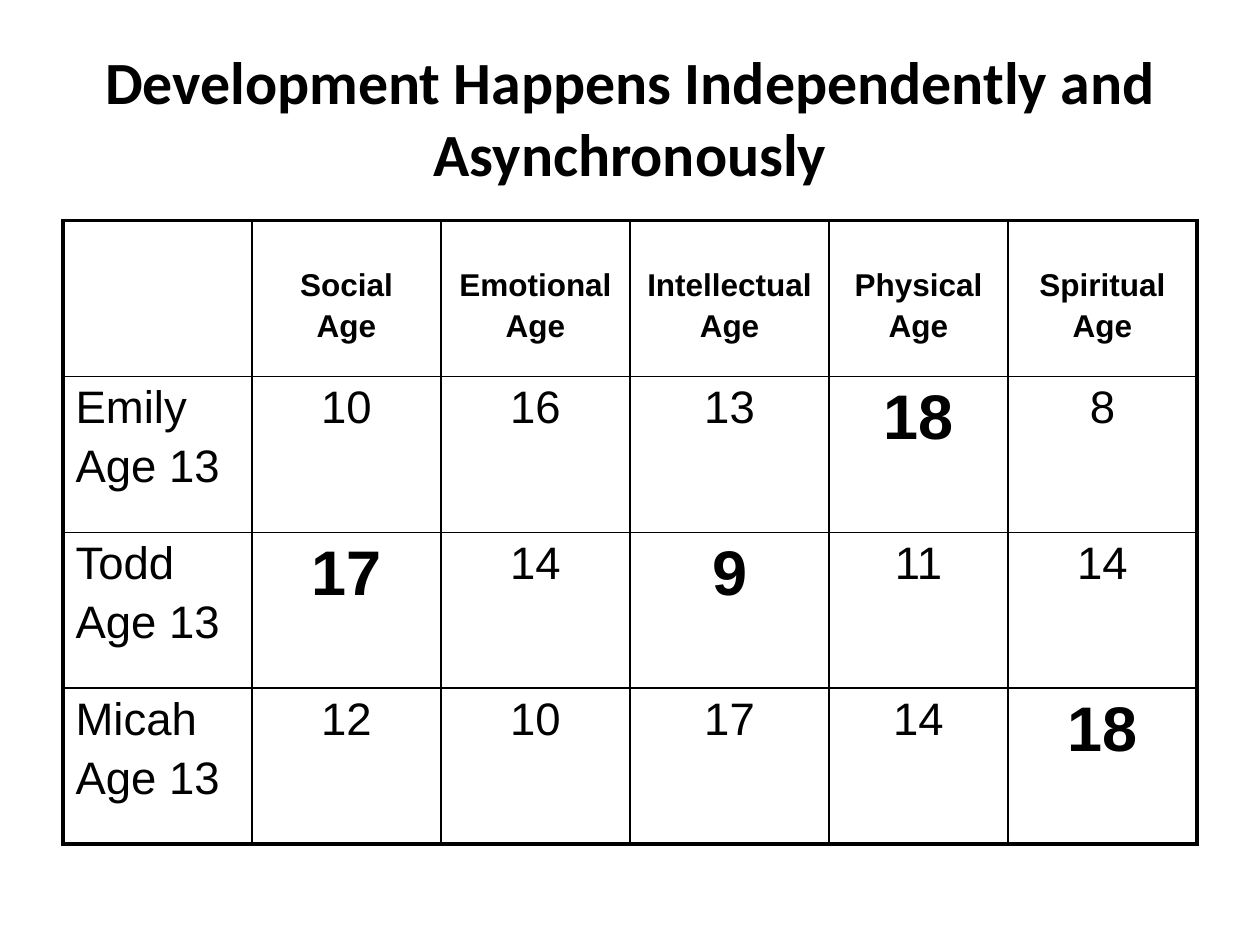
from lxml.etree import SubElement
from pptx import Presentation
from pptx.dml.color import RGBColor
from pptx.enum.text import MSO_ANCHOR, PP_ALIGN
from pptx.oxml.ns import qn
from pptx.util import Inches, Pt

COLORS = {"ink": "000000", "paper": "FFFFFF"}
SLIDE_W, SLIDE_H = Inches(10), Inches(7.5)
TITLE = "Development Happens Independently and Asynchronously"
HEADERS = ["Social", "Emotional", "Intellectual", "Physical", "Spiritual"]
AGES = {
    "Emily": [10, 16, 13, 18, 8],
    "Todd": [17, 14, 9, 11, 14],
    "Micah": [12, 10, 17, 14, 18],
}
STANDOUT = {("Emily", 3), ("Todd", 0), ("Todd", 2), ("Micah", 4)}
COL_SHARES = [1.5, 1.5, 1.5, 1.58, 1.42, 1.5]
THIN, THICK = 1, 2.25


def box(x, y, w, h):
    """Turn shares of the slide's size into lengths."""
    return int(x * SLIDE_W), int(y * SLIDE_H), int(w * SLIDE_W), int(h * SLIDE_H)


def write(tf, text, size=26, bold=False, font="Arial", align=PP_ALIGN.CENTER):
    """Write each line of text as a paragraph in one format."""
    for i, line in enumerate(text.split("\n")):
        p = tf.add_paragraph() if i else tf.paragraphs[0]
        p.alignment = align
        p.space_before = Pt(round(size * 0.18, 1) if i else 0)
        r = p.add_run()
        r.text = line
        r.font.name, r.font.size, r.font.bold = font, Pt(size), bold
        r.font.color.rgb = RGBColor.from_string(COLORS["ink"])


def set_borders(cell, widths):
    tcPr = cell._tc.get_or_add_tcPr()
    for i, (side, width) in enumerate(widths.items()):
        ln = tcPr.makeelement(qn(f"a:{side}"), {"w": str(Pt(width))})
        fill = SubElement(ln, qn("a:solidFill"))
        SubElement(fill, qn("a:srgbClr"), val=COLORS["ink"])
        tcPr.insert(i, ln)


def add_title(s, x, y, w, h):
    tf = s.shapes.add_textbox(x, y, w, h).text_frame
    tf.word_wrap = True
    tf.vertical_anchor = MSO_ANCHOR.MIDDLE
    write(tf, TITLE, size=34.2, bold=True, font="Calibri")


def fill_text(table):
    for c, name in enumerate(HEADERS, 1):
        cell = table.cell(0, c)
        cell.margin_top = Inches(0.38)
        write(cell.text_frame, f"{name}\nAge", size=18, bold=True)
    for r, (child, ages) in enumerate(AGES.items(), 1):
        write(table.cell(r, 0).text_frame, f"{child}\nAge 13", align=PP_ALIGN.LEFT)
        for c, age in enumerate(ages):
            big = (child, c) in STANDOUT
            write(table.cell(r, c + 1).text_frame, str(age),
                  size=36 if big else 26, bold=big)


def add_age_table(s, x, y, w, h):
    rows, cols = len(AGES) + 1, len(COL_SHARES)
    table = s.shapes.add_table(rows, cols, x, y, w, h).table
    table.first_row = table.horz_banding = False
    for col, share in zip(table.columns, COL_SHARES):
        col.width = int(w * share / sum(COL_SHARES))
    for row in table.rows:
        row.height = int(h / rows)
    fill_text(table)
    for r in range(rows):
        for c in range(cols):
            cell = table.cell(r, c)
            cell.fill.solid()
            cell.fill.fore_color.rgb = RGBColor.from_string(COLORS["paper"])
            outer = {"lnL": c == 0, "lnR": c == cols - 1,
                     "lnT": r == 0, "lnB": r == rows - 1}
            set_borders(cell, {side: THICK if edge else THIN
                               for side, edge in outer.items()})


def main():
    prs = Presentation()
    prs.slide_width, prs.slide_height = SLIDE_W, SLIDE_H
    s = prs.slides.add_slide(prs.slide_layouts[6])
    add_title(s, *box(0.05, 0.04, 0.9, 1 / 6))
    add_age_table(s, *box(0.05, 7 / 30, 0.9, 0.66))
    prs.save("out.pptx")


if __name__ == "__main__":
    main()
